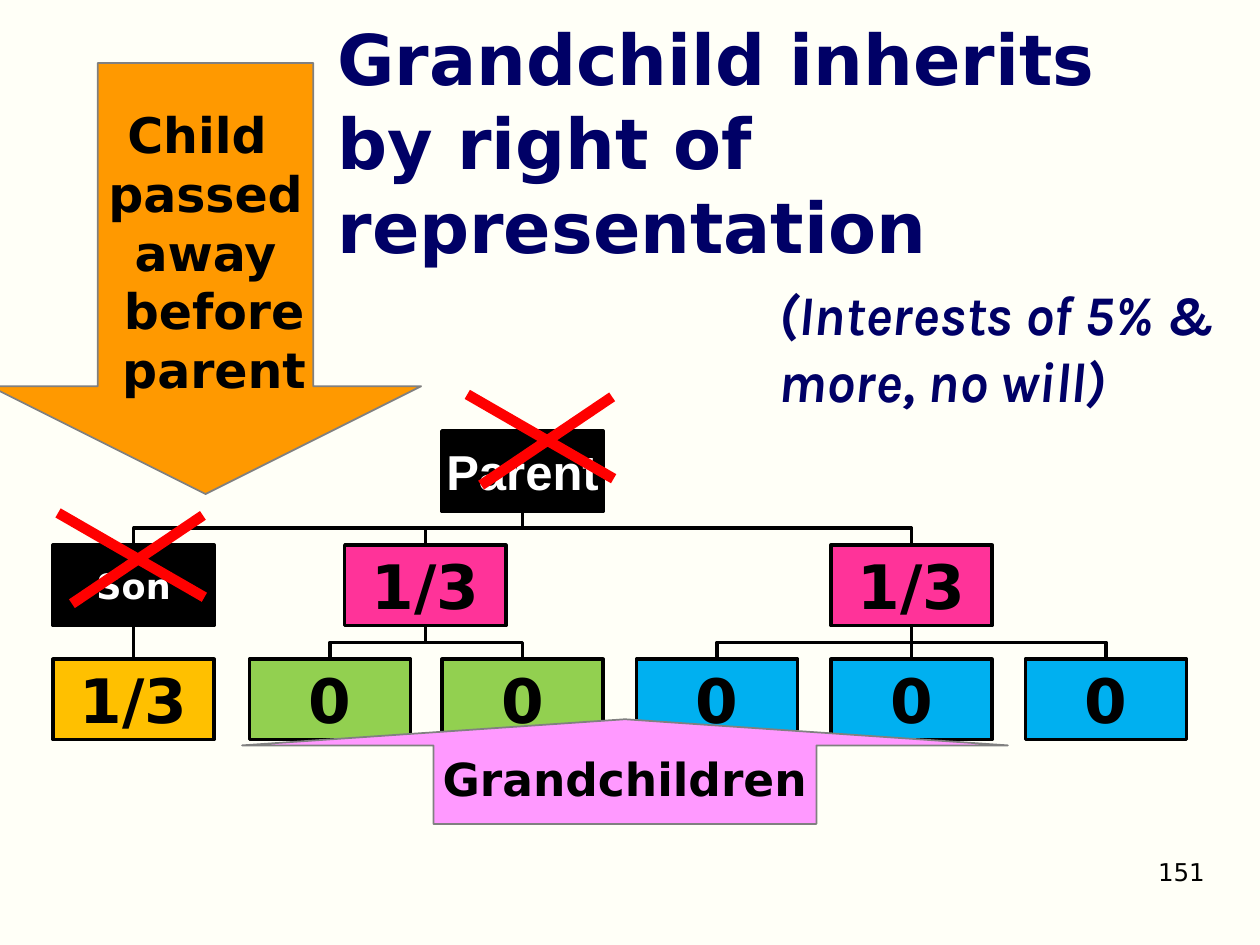
from pptx import Presentation
from pptx.dml.color import RGBColor
from pptx.enum.shapes import MSO_CONNECTOR, MSO_SHAPE
from pptx.enum.text import MSO_ANCHOR, MSO_AUTO_SIZE, PP_ALIGN
from pptx.oxml.ns import qn
from pptx.util import Cm, Pt
from lxml import etree

LEFT, CENTER, RIGHT = PP_ALIGN.LEFT, PP_ALIGN.CENTER, PP_ALIGN.RIGHT
TOP, MIDDLE = MSO_ANCHOR.TOP, MSO_ANCHOR.MIDDLE
RECTANGLE = MSO_SHAPE.RECTANGLE
NO_AUTOFIT = MSO_AUTO_SIZE.NONE

BLACK, WHITE, NAVY, GRAY, RED = "000000", "FFFFFF", "000066", "808080", "FF0000"
CREAM, PINK, GREEN, BLUE, AMBER = "FFFFF7", "FF3399", "92D050", "00B0F0", "FFC000"

TITLE = "Grandchild inherits by right of representation"
SUBTITLE = "(Interests of 5% & more, no will)"
PAGE_NUMBER = "151"

SHARE = {"size": 35}
FAMILY = {
    "parent": ("Parent", 2, 0, BLACK, {"size": 28, "color": WHITE, "font": "Arial"}),
    "son": ("Son", 0, 1, BLACK, {"size": 20, "color": WHITE}),
    "second child": ("1/3", 1.5, 1, PINK, SHARE),
    "third child": ("1/3", 4, 1, PINK, SHARE),
    "son's child": ("1/3", 0, 2, AMBER, SHARE),
    "first cousin": ("0", 1.01, 2, GREEN, SHARE),
    "second cousin": ("0", 2, 2, GREEN, SHARE),
    "third cousin": ("0", 3, 2, BLUE, SHARE),
    "fourth cousin": ("0", 4, 2, BLUE, SHARE),
    "fifth cousin": ("0", 5, 2, BLUE, SHARE),
}
DESCENT = {
    "parent": ["son", "second child", "third child"],
    "son": ["son's child"],
    "second child": ["first cousin", "second cousin"],
    "third child": ["third cousin", "fourth cousin", "fifth cousin"],
}
ARROWS = [
    (MSO_SHAPE.DOWN_ARROW, (-0.2, 1.27, 8.69, 8.69), "FF9900", 28,
     ["Child ", "passed", "away", " before", " parent"]),
    (MSO_SHAPE.UP_ARROW, (4.88, 14.5, 15.44, 2.11), "FF99FF", 26, ["Grandchildren"]),
]
CROSSES = [(9.42, 7.95), (1.17, 10.34)]
STROKES = [((2.95, 1.7), (0, 0)), ((0.28, 1.83), (2.92, 0.05))]

TREE_LEFT, TREE_TOP = 1.07, 8.69
COLUMN_STEP, ROW_STEP = 3.92, 2.3
BOX_WIDTH, BOX_HEIGHT = 3.25, 1.62


def rgb(color):
    return RGBColor.from_string(color)


def write(shape, lines, size=18, color=BLACK, font="DejaVu Sans", bold=True,
          italic=False, align=CENTER, anchor=MIDDLE, wrap=True, inset=None):
    frame = shape.text_frame
    frame.auto_size = NO_AUTOFIT
    frame.word_wrap = wrap
    frame.vertical_anchor = anchor
    if inset is not None:
        frame.margin_left = frame.margin_right = Cm(inset)
        frame.margin_top = frame.margin_bottom = Cm(inset)
    for index, line in enumerate(lines):
        para = frame.paragraphs[0] if index == 0 else frame.add_paragraph()
        para.alignment = align
        span = para.add_run()
        span.text = line
        span.font.name = font
        span.font.size = Pt(size)
        span.font.bold = bold
        span.font.italic = italic
        span.font.color.rgb = rgb(color)


def draw_outline(shape, color, width):
    shape.line.color.rgb = rgb(color)
    shape.line.width = Pt(width)


def add_block(page, kind, area, fill, line, width):
    block = page.shapes.add_shape(kind, *map(Cm, area))
    block.shadow.inherit = False
    block.fill.solid()
    block.fill.fore_color.rgb = rgb(fill)
    draw_outline(block, line, width)
    return block


def add_line(page, start, end, color, width):
    line = page.shapes.add_connector(MSO_CONNECTOR.STRAIGHT, *map(Cm, start + end))
    etree.SubElement(line._element.spPr, qn("a:effectLst"))
    draw_outline(line, color, width)


def add_elbow(page, start, end):
    middle = (start[1] + end[1]) / 2
    corners = [(start[0], middle), (end[0], middle), end]
    builder = page.shapes.build_freeform(Cm(start[0]), Cm(start[1]))
    builder.add_line_segments([(Cm(x), Cm(y)) for x, y in corners], close=False)
    elbow = builder.convert_to_shape()
    elbow.shadow.inherit = False
    elbow.fill.background()
    draw_outline(elbow, BLACK, 2)


def box_corner(name):
    column, row = FAMILY[name][1:3]
    return TREE_LEFT + column * COLUMN_STEP, TREE_TOP + row * ROW_STEP


def add_descent(page, elder, heir):
    elder_left, elder_top = box_corner(elder)
    heir_left, heir_top = box_corner(heir)
    start = (elder_left + BOX_WIDTH / 2, elder_top + BOX_HEIGHT)
    end = (heir_left + BOX_WIDTH / 2, heir_top)
    if start[0] == end[0]:
        add_line(page, start, end, BLACK, 2)
    else:
        add_elbow(page, start, end)


def add_text(page, area, text, **style):
    box = page.shapes.add_textbox(*map(Cm, area))
    write(box, [text], anchor=TOP, **style)


def main():
    deck = Presentation()
    deck.slide_width, deck.slide_height = Cm(25.4), Cm(19.05)
    page = deck.slides.add_slide(deck.slide_layouts[5])
    page.background.fill.solid()
    page.background.fill.fore_color.rgb = rgb(CREAM)

    title = page.shapes.title
    title.left, title.top, title.width, title.height = map(Cm, (6.55, 1.27, 17.15, 3.18))
    write(title, [TITLE], size=40, color=NAVY, align=LEFT)
    add_text(page, (18.62, 17.15, 5.92, 1.32), PAGE_NUMBER, size=14, bold=False, align=RIGHT)
    add_text(page, (15.44, 5.51, 9.96, 4.37), SUBTITLE, size=32, color=NAVY,
             font="Karla", italic=True, align=LEFT)

    for elder, heirs in DESCENT.items():
        for heir in heirs:
            add_descent(page, elder, heir)
    for name, (label, _, _, fill, style) in FAMILY.items():
        area = (*box_corner(name), BOX_WIDTH, BOX_HEIGHT)
        box = add_block(page, RECTANGLE, area, fill, BLACK, 2)
        write(box, [label], inset=0.05, **style)

    for kind, area, fill, size, lines in ARROWS:
        arrow = add_block(page, kind, area, fill, GRAY, 1)
        arrow.adjustments[0], arrow.adjustments[1] = 0.5, 0.25
        write(arrow, lines, size=size, wrap=False)

    for left, top in CROSSES:
        for stroke in STROKES:
            start, end = [(left + x, top + y) for x, y in stroke]
            add_line(page, start, end, RED, 6)

    deck.save("out.pptx")


if __name__ == "__main__":
    main()
